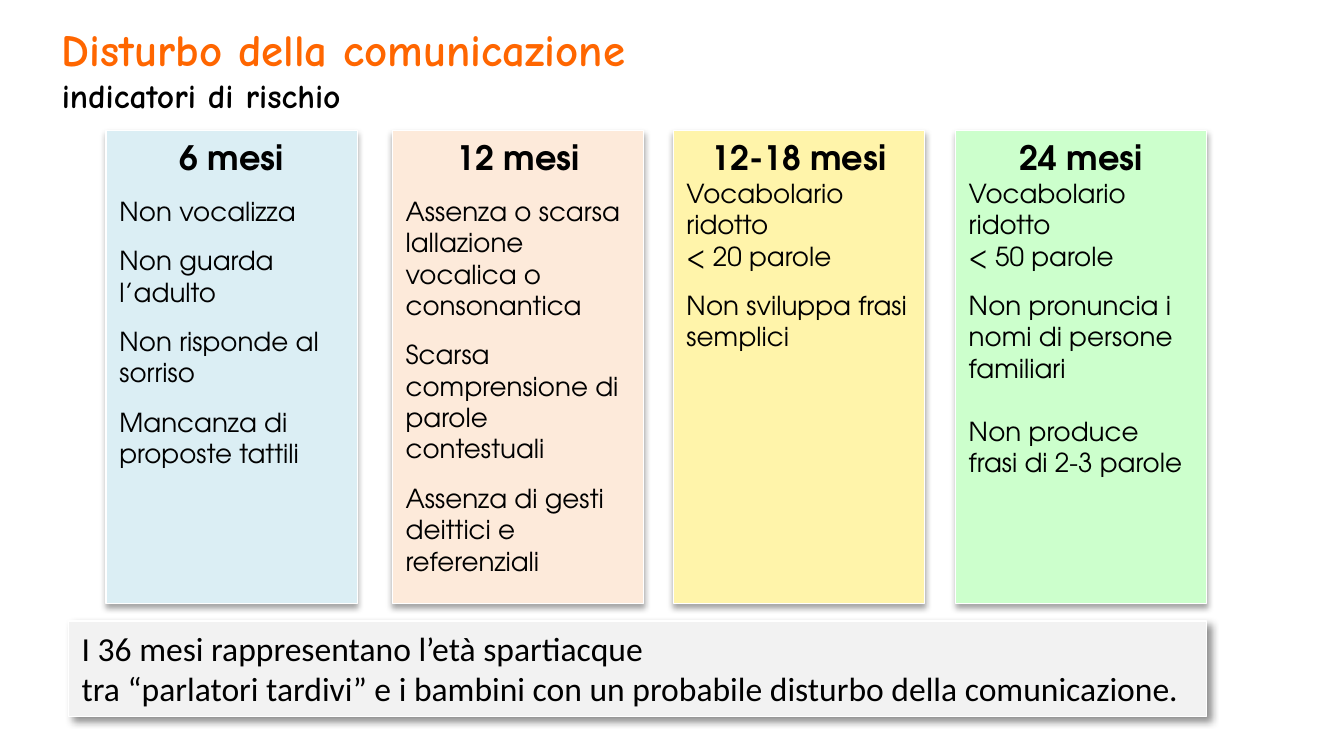
from dataclasses import dataclass

from lxml.etree import SubElement
from pptx import Presentation
from pptx.dml.color import RGBColor
from pptx.enum.shapes import MSO_SHAPE
from pptx.enum.text import MSO_ANCHOR, MSO_AUTO_SIZE, PP_ALIGN
from pptx.oxml.ns import qn
from pptx.util import Inches, Pt


@dataclass(frozen=True)
class Theme:
    title_font: str = "Comic Neue"
    card_font: str = "TeX Gyre Adventor"
    note_font: str = "Calibri"
    title_size: int = 24
    heading_size: int = 18
    body_size: int = 14
    accent: str = "FF6600"
    ink: str = "000000"
    border: str = "FFFFFF"
    note_fill: str = "F2F2F2"


THEME = Theme()

# Spacing before an indicator, in points
TIGHT, GAP, WIDE = 0, 9.6, 17

# Age, left edge in inches, card colour, indicators with the space before each
AGES = [
    ("6 mesi", 0.79, "DBEEF4", [
        (GAP, "Non vocalizza"),
        (GAP, "Non guarda l’adulto"),
        (GAP, "Non risponde al sorriso"),
        (GAP, "Mancanza di proposte tattili"),
    ]),
    ("12 mesi", 2.92, "FDEADA", [
        (GAP, "Assenza o scarsa lallazione vocalica o consonantica"),
        (GAP, "Scarsa comprensione di parole contestuali"),
        (GAP, "Assenza di gesti deittici e referenziali"),
    ]),
    ("12-18 mesi", 5.01, "FFF4AA", [
        (TIGHT, "Vocabolario ridotto"),
        (TIGHT, "< 20 parole"),
        (GAP, "Non sviluppa frasi semplici"),
    ]),
    ("24 mesi", 7.11, "CCFFCC", [
        (TIGHT, "Vocabolario ridotto"),
        (TIGHT, "< 50 parole"),
        (GAP, "Non pronuncia i nomi di persone familiari"),
        (WIDE, "Non produce frasi di 2-3 parole"),
    ]),
]
NOTE_LINES = [
    "I 36 mesi rappresentano l’età spartiacque",
    "tra “parlatori tardivi” e i bambini con un probabile disturbo della comunicazione.",
]

# Card row, in inches
CARD_TOP, CARD_WIDTH, CARD_HEIGHT = 0.97, 1.87, 3.52


def write_line(frame, text, font, size, color=THEME.ink, bold=False,
               align=PP_ALIGN.LEFT, before=0):
    """Fill the first paragraph if it is still empty, otherwise add one."""
    first = frame.paragraphs[0]
    line = first if not first.text else frame.add_paragraph()
    line.text = text
    line.alignment = align
    line.space_before = Pt(before)
    line.font.name = font
    line.font.size = Pt(size)
    line.font.bold = bold
    line.font.color.rgb = RGBColor.from_string(color)


def add_shadow(shape, blur, distance, angle, opacity):
    shape.shadow.inherit = False
    effects = shape._element.spPr.find(qn("a:effectLst"))
    shadow = SubElement(effects, qn("a:outerShdw"), blurRad=str(Pt(blur)),
                        dist=str(Pt(distance)), dir=str(angle * 60000), rotWithShape="0")
    color = SubElement(shadow, qn("a:srgbClr"), val="000000")
    SubElement(color, qn("a:alpha"), val=str(opacity * 1000))


def add_panel(slide, left, top, width, height, fill):
    panel = slide.shapes.add_shape(MSO_SHAPE.RECTANGLE, Inches(left), Inches(top),
                                   Inches(width), Inches(height))
    panel.fill.solid()
    panel.fill.fore_color.rgb = RGBColor.from_string(fill)
    panel.line.color.rgb = RGBColor.from_string(THEME.border)
    panel.line.width = Pt(0.75)
    panel.text_frame.word_wrap = True
    panel.text_frame.vertical_anchor = MSO_ANCHOR.TOP
    return panel


def add_title(slide):
    title = slide.shapes.title
    title.left, title.top = Inches(0.36), Inches(0.11)
    title.width, title.height = Inches(7.94), Inches(0.81)
    frame = title.text_frame
    frame.auto_size = MSO_AUTO_SIZE.NONE
    frame.vertical_anchor = MSO_ANCHOR.TOP
    write_line(frame, "Disturbo della comunicazione", THEME.title_font,
               THEME.title_size, THEME.accent, bold=True)
    write_line(frame, "indicatori di rischio", THEME.title_font,
               THEME.heading_size, bold=True)


def add_age_card(slide, age, left, fill, indicators):
    card = add_panel(slide, left, CARD_TOP, CARD_WIDTH, CARD_HEIGHT, fill)
    add_shadow(card, blur=3.1, distance=1.8, angle=90, opacity=35)
    write_line(card.text_frame, age, THEME.card_font, THEME.heading_size,
               bold=True, align=PP_ALIGN.CENTER)
    for before, indicator in indicators:
        write_line(card.text_frame, indicator, THEME.card_font, THEME.body_size,
                   before=before)


def add_note(slide):
    note = add_panel(slide, 0.51, 4.62, 8.47, 0.71, THEME.note_fill)
    add_shadow(note, blur=4, distance=3, angle=45, opacity=43)
    for text in NOTE_LINES:
        write_line(note.text_frame, text, THEME.note_font, THEME.heading_size)


def main():
    deck = Presentation()
    # Widescreen, 16:9
    deck.slide_width = Inches(10)
    deck.slide_height = deck.slide_width * 9 // 16
    slide = deck.slides.add_slide(deck.slide_layouts[5])

    # Title and subtitle
    add_title(slide)

    # One card per age
    for age, left, fill, indicators in AGES:
        add_age_card(slide, age, left, fill, indicators)

    # Closing note
    add_note(slide)

    deck.save("out.pptx")


if __name__ == "__main__":
    main()
